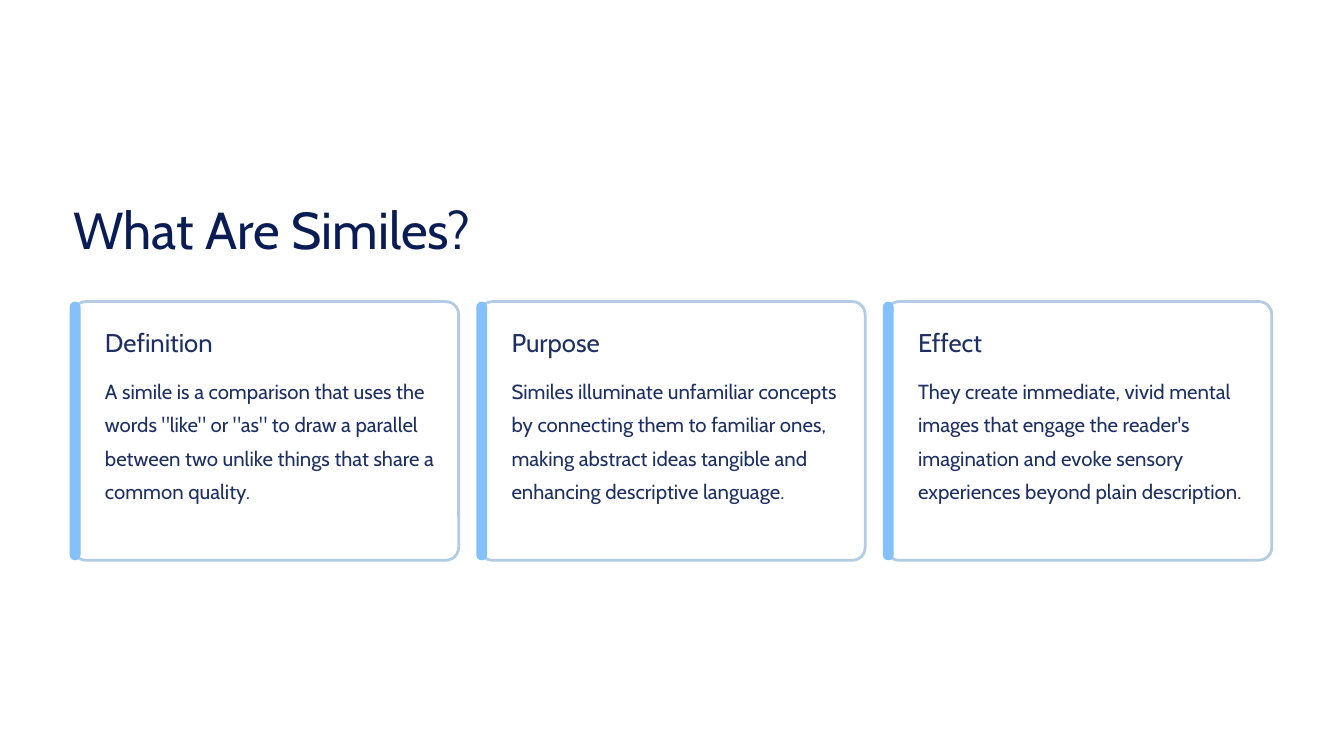
import pptx
import pptx.dml.color
import pptx.enum.shapes
import pptx.enum.text
import pptx.util

FONT = "Cabin"
COLORS = {"title": "091C53", "text": "1E3063", "border": "B4CCE3", "accent": "84C1FA"}

WIDTH, HEIGHT = 16, 9
LEFT = 0.87
CARD_TOP, CARD_WIDTH, CARD_HEIGHT = 3.59, 4.59, 3.08
COLUMN_STEP = 4.84
TEXT_INDENT = 0.38

CARDS = [
    ("Definition",
     'A simile is a comparison that uses the words "like" or "as" to draw a '
     "parallel between two unlike things that share a common quality."),
    ("Purpose",
     "Similes illuminate unfamiliar concepts by connecting them to familiar ones, "
     "making abstract ideas tangible and enhancing descriptive language."),
    ("Effect",
     "They create immediate, vivid mental images that engage the reader's "
     "imagination and evoke sensory experiences beyond plain description."),
]


def rgb(name):
    return pptx.dml.color.RGBColor.from_string(COLORS[name])


def inches(*lengths):
    return [pptx.util.Inches(length) for length in lengths]


def set_text(sp, text, size, spacing, color, wrap):
    """Fill a title or text box with one left-aligned paragraph without insets."""
    tf = sp.text_frame
    tf.word_wrap = wrap
    tf.auto_size = pptx.enum.text.MSO_AUTO_SIZE.NONE
    tf.vertical_anchor = pptx.enum.text.MSO_ANCHOR.TOP
    tf.margin_left = tf.margin_top = tf.margin_right = tf.margin_bottom = 0
    p = tf.paragraphs[0]
    p.text = text
    p.alignment = pptx.enum.text.PP_ALIGN.LEFT
    p.space_before = pptx.util.Pt(0)
    p.line_spacing = pptx.util.Pt(spacing)
    p.font.name = FONT
    p.font.size = pptx.util.Pt(size)
    p.font.color.rgb = rgb(color)


def add_title(s, text):
    sp = s.shapes.title
    sp.left, sp.top, sp.width, sp.height = inches(LEFT, 2.32, 6.2, 0.78)
    set_text(sp, text, 44.5, 55.5, "title", wrap=False)


def add_text(s, box, text, size, spacing, wrap):
    sp = s.shapes.add_textbox(*inches(*box))
    set_text(sp, text, size, spacing, "text", wrap)


def add_rounded(s, box, radius, fill=None, line=None):
    sp = s.shapes.add_shape(
        pptx.enum.shapes.MSO_SHAPE.ROUNDED_RECTANGLE, *inches(*box))
    sp.adjustments[0] = radius
    sp.shadow.inherit = False
    if fill:
        sp.fill.solid()
        sp.fill.fore_color.rgb = rgb(fill)
    else:
        sp.fill.background()
    if line:
        sp.line.color.rgb = rgb(line)
        sp.line.width = pptx.util.Pt(2.4)
    else:
        sp.line.fill.background()


def add_card(s, left, heading, body):
    """Draw an outlined card with an accent bar, a heading and body text."""
    add_rounded(s, (left, CARD_TOP, CARD_WIDTH, CARD_HEIGHT), 0.05, line="border")
    add_rounded(s, (left - 0.04, CARD_TOP, 0.13, CARD_HEIGHT), 0.5, fill="accent")
    text_left = left + TEXT_INDENT
    add_text(s, (text_left, CARD_TOP + 0.29, 3.1, 0.39), heading, 22, 27.5, wrap=False)
    add_text(s, (text_left, CARD_TOP + 0.82, 3.93, 1.98), body, 17.5, 28.5, wrap=True)


def main():
    prs = pptx.Presentation()
    prs.slide_width, prs.slide_height = inches(WIDTH, HEIGHT)
    s = prs.slides.add_slide(prs.slide_layouts.get_by_name("Title Only"))
    add_title(s, "What Are Similes?")
    for column, (heading, body) in enumerate(CARDS):
        add_card(s, LEFT + column * COLUMN_STEP, heading, body)
    prs.save("out.pptx")


if __name__ == "__main__":
    main()
